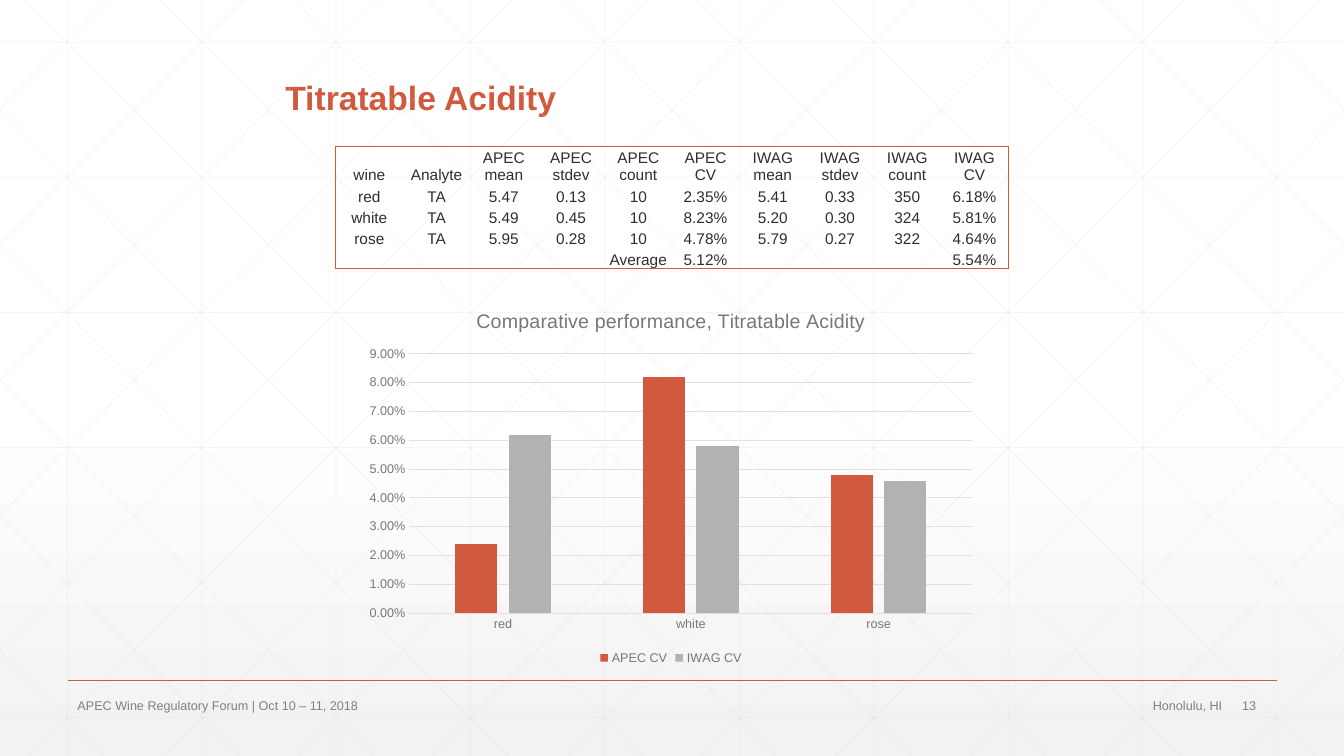
from dataclasses import dataclass

from lxml.etree import SubElement
from pptx import Presentation
from pptx.chart.data import CategoryChartData
from pptx.dml.color import RGBColor
from pptx.enum.chart import XL_CHART_TYPE as ChartType
from pptx.enum.chart import XL_LEGEND_POSITION as LegendPosition
from pptx.enum.chart import XL_TICK_MARK as TickMark
from pptx.enum.shapes import MSO_CONNECTOR as Connector
from pptx.enum.text import MSO_ANCHOR as Anchor
from pptx.enum.text import PP_ALIGN as Align
from pptx.oxml.ns import qn
from pptx.slide import Slide
from pptx.table import _Cell as Cell
from pptx.text.text import Font
from pptx.util import Inches, Pt

WIDTH, HEIGHT = 13.33, 7.5
FONT = "Arial"
NO_STYLE_NO_GRID = "{2D5ABB26-0587-4C30-8999-92F81FD0307C}"

ACCENT = RGBColor(0xD1, 0x5A, 0x3E)
GRAY = RGBColor(0xB2, 0xB2, 0xB2)
INK = RGBColor(0x2D, 0x2E, 0x2D)
CHART_TEXT = RGBColor(0x76, 0x78, 0x76)
CHART_LINE = RGBColor(0xDF, 0xE0, 0xDF)
FOOTER_TEXT = RGBColor(0x80, 0x80, 0x80)
LATTICE = RGBColor(0xD9, 0xD9, 0xD9)
WHITE = RGBColor(0xFF, 0xFF, 0xFF)
PALE = RGBColor(0xF2, 0xF2, 0xF2)

HEADERS = ("wine", "Analyte", "APEC mean", "APEC stdev", "APEC count", "APEC CV",
           "IWAG mean", "IWAG stdev", "IWAG count", "IWAG CV")
RESULTS = (
    ("red", "TA", "5.47", "0.13", "10", "2.35%", "5.41", "0.33", "350", "6.18%"),
    ("white", "TA", "5.49", "0.45", "10", "8.23%", "5.20", "0.30", "324", "5.81%"),
    ("rose", "TA", "5.95", "0.28", "10", "4.78%", "5.79", "0.27", "322", "4.64%"),
)
AVERAGES = ("", "", "", "", "Average", "5.12%", "", "", "", "5.54%")


@dataclass(frozen=True)
class CvSeries:
    name: str
    values: tuple[float, ...]
    color: RGBColor


@dataclass(frozen=True)
class FooterText:
    text: str
    left: float
    width: float
    align: Align = Align.LEFT


CV_SERIES = (
    CvSeries("APEC CV", (0.024, 0.082, 0.048), ACCENT),
    CvSeries("IWAG CV", (0.062, 0.058, 0.046), GRAY),
)
FOOTER = (
    FooterText("13", 12.22, 0.45),
    FooterText("APEC Wine Regulatory Forum | Oct 10 – 11, 2018", 0.67, 6.7),
    FooterText("Honolulu, HI", 7.44, 4.78, Align.RIGHT),
)


def set_font(font: Font, size: float, color: RGBColor, bold: bool = False) -> None:
    font.name, font.size, font.bold = FONT, Pt(size), bold
    font.color.rgb = color


def add_line(slide: Slide, x1: float, y1: float, x2: float, y2: float,
             color: RGBColor, width: float, opacity: int = 100) -> None:
    line = slide.shapes.add_connector(
        Connector.STRAIGHT, Inches(x1), Inches(y1), Inches(x2), Inches(y2))
    line.line.color.rgb = color
    line.line.width = Pt(width)
    properties = line._element.spPr
    if opacity < 100:
        SubElement(properties.find(".//" + qn("a:srgbClr")), qn("a:alpha"),
                   val=str(opacity * 1000))
    SubElement(properties, qn("a:effectLst"))


def add_background(slide: Slide) -> None:
    fill = slide.background.fill
    fill.gradient()
    fill.gradient_angle = 270
    for stop, color, position in zip(fill.gradient_stops, (WHITE, PALE), (0.53, 1)):
        stop.color.rgb = color
        stop.position = position


def add_lattice(slide: Slide) -> None:
    """Faint verticals, horizontals and mirrored diagonals, clipped to the slide."""
    step, slope = 4 / 3, 1.006
    lines = [(x, 0, x, HEIGHT) for x in (step * (i + 0.5) for i in range(10))]
    lines += [(0, y, WIDTH, y) for y in (0.42 + 1.34 * i for i in range(6))]
    for i in range(-5, 10):
        start = 0.25 + step * i
        x1, x2 = max(start, 0), min(start + HEIGHT / slope, WIDTH)
        y1, y2 = (x1 - start) * slope, (x2 - start) * slope
        lines += [(x1, y1, x2, y2), (WIDTH - x1, y1, WIDTH - x2, y2)]
    for ends in lines:
        add_line(slide, *ends, LATTICE, 0.5, opacity=25)


def add_title(slide: Slide) -> None:
    title = slide.shapes.title
    title.left, title.top = Inches(2.73), Inches(0.55)
    title.width, title.height = Inches(7.88), Inches(0.67)
    title.text_frame.vertical_anchor = Anchor.BOTTOM
    paragraph = title.text_frame.paragraphs[0]
    paragraph.text = "Titratable Acidity"
    paragraph.alignment = Align.LEFT
    paragraph.line_spacing = 0.9
    set_font(paragraph.font, 24, ACCENT, bold=True)


def add_footer(slide: Slide) -> None:
    add_line(slide, 0.67, 6.75, 12.67, 6.75, ACCENT, 1)
    for item in FOOTER:
        box = slide.shapes.add_textbox(
            Inches(item.left), Inches(6.88), Inches(item.width), Inches(0.24))
        frame = box.text_frame
        frame.word_wrap = True
        frame.margin_top = frame.margin_bottom = 0
        frame.vertical_anchor = Anchor.MIDDLE
        paragraph = frame.paragraphs[0]
        paragraph.text = item.text
        paragraph.alignment = item.align
        set_font(paragraph.font, 9, FOOTER_TEXT)


def add_border(cell: Cell, side: str) -> None:
    border = SubElement(cell._tc.get_or_add_tcPr(), qn(f"a:ln{side}"), w=str(Pt(0.5)))
    fill = SubElement(border, qn("a:solidFill"))
    SubElement(fill, qn("a:srgbClr"), val=str(ACCENT))


def add_results_table(slide: Slide) -> None:
    rows = (HEADERS, *RESULTS, AVERAGES)
    last_row, last_column = len(rows) - 1, len(HEADERS) - 1
    table = slide.shapes.add_table(len(rows), len(HEADERS), Inches(3.33), Inches(1.45),
                                   Inches(6.67), Inches(1.18)).table
    table.first_row = table.horz_banding = False
    table._tbl.tblPr.find(qn("a:tableStyleId")).text = NO_STYLE_NO_GRID
    for r, values in enumerate(rows):
        table.rows[r].height = Inches(0.21 if r else 0.34)
        for c, value in enumerate(values):
            cell = table.cell(r, c)
            cell.margin_left = cell.margin_right = cell.margin_top = Inches(0.01)
            cell.margin_bottom = 0
            cell.vertical_anchor = Anchor.BOTTOM
            edges = {"L": c == 0, "R": c == last_column, "T": r == 0, "B": r == last_row}
            for side, is_outer in edges.items():
                if is_outer:
                    add_border(cell, side)
            cell.fill.background()
            paragraph = cell.text_frame.paragraphs[0]
            paragraph.alignment = Align.CENTER
            set_font(paragraph.font, 11, INK)
            if value:
                paragraph.text = value
            else:
                SubElement(paragraph._p, qn("a:endParaRPr"), sz="1100")


def add_cv_chart(slide: Slide) -> None:
    data = CategoryChartData(number_format="0.00%")
    data.categories = [row[0] for row in RESULTS]
    for item in CV_SERIES:
        data.add_series(item.name, item.values)
    chart = slide.shapes.add_chart(ChartType.COLUMN_CLUSTERED, Inches(3.54), Inches(2.9),
                                   Inches(6.23), Inches(3.74), data).chart
    set_font(chart.font, 10, INK)

    chart.has_title = True
    paragraph = chart.chart_title.text_frame.paragraphs[0]
    paragraph.text = "Comparative performance, Titratable Acidity"
    set_font(paragraph.font, 14, CHART_TEXT)
    chart.chart_title.include_in_layout = False

    chart.has_legend = True
    chart.legend.position = LegendPosition.BOTTOM
    chart.legend.include_in_layout = False
    set_font(chart.legend.font, 9, CHART_TEXT)

    value_axis = chart.value_axis
    for axis in (chart.category_axis, value_axis):
        axis.major_tick_mark = axis.minor_tick_mark = TickMark.NONE
        set_font(axis.tick_labels.font, 9, CHART_TEXT)
    value_axis.minimum_scale, value_axis.maximum_scale = 0, 0.09
    value_axis.major_unit = 0.01
    value_axis.tick_labels.number_format = "0.00%"
    value_axis.tick_labels.number_format_is_linked = False
    value_axis.format.line.fill.background()
    for line in (chart.category_axis.format.line, value_axis.major_gridlines.format.line):
        line.color.rgb, line.width = CHART_LINE, Pt(0.75)

    plot = chart.plots[0]
    plot.vary_by_categories = False
    plot.gap_width, plot.overlap = 219, -27
    for series, item in zip(plot.series, CV_SERIES):
        series.format.fill.solid()
        series.format.fill.fore_color.rgb = item.color


def main() -> None:
    presentation = Presentation()
    presentation.slide_width, presentation.slide_height = Inches(WIDTH), Inches(HEIGHT)
    slide = presentation.slides.add_slide(presentation.slide_layouts.get_by_name("Title Only"))
    for add_part in (add_background, add_lattice, add_title, add_footer,
                     add_results_table, add_cv_chart):
        add_part(slide)
    presentation.save("out.pptx")


if __name__ == "__main__":
    main()
